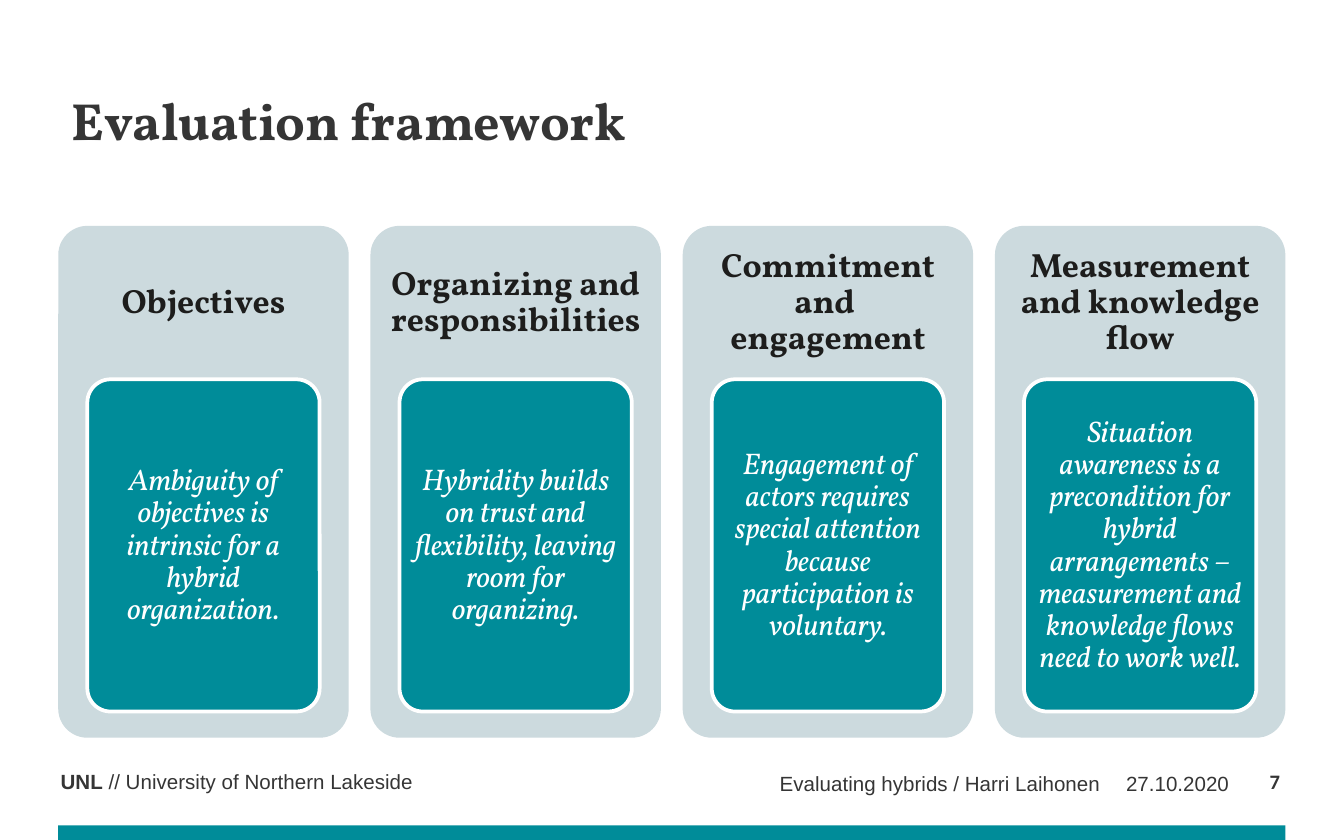
from pptx import Presentation
from pptx.dml.color import RGBColor
from pptx.enum.shapes import MSO_SHAPE as SHAPE
from pptx.enum.text import MSO_ANCHOR as ANCHOR, PP_ALIGN as ALIGN
from pptx.util import Pt

TEAL = RGBColor(0x00, 0x8C, 0x99)
MIST = RGBColor(0xCC, 0xDA, 0xDE)
WHITE = RGBColor(0xFF, 0xFF, 0xFF)
GREY = RGBColor(0x35, 0x35, 0x35)
INK = RGBColor(0x1D, 0x1D, 0x1C)

LEFT, WIDTH = 31.2, 657.4
CARD_TOP, CARD_W, CARD_H = 121, 155.6, 274.2
HEAD_H = 82.2
PANEL_TOP, PANEL_H = 203.2, 178

CARDS = [
    ("Objectives",
     "Ambiguity of objectives is intrinsic for a hybrid organization."),
    ("Organizing and responsibilities",
     "Hybridity builds on trust and flexibility, leaving room for organizing."),
    ("Commitment and \vengagement",
     "Engagement of actors requires special attention because participation "
     "is voluntary."),
    ("Measurement and knowledge flow",
     "Situation awareness is a precondition for hybrid arrangements – "
     "measurement and knowledge flows need to work well."),
]


def write(sp, text, size, color, font="Arial", bold=False, italic=False,
          align=ALIGN.LEFT, anchor=ANCHOR.TOP, inset=(7.2, 3.6), spacing=None):
    tf = sp.text_frame
    tf.word_wrap = True
    tf.vertical_anchor = anchor
    tf.margin_left = tf.margin_right = Pt(inset[0])
    tf.margin_top = tf.margin_bottom = Pt(inset[1])
    tf.text = text
    p = tf.paragraphs[0]
    p.alignment = align
    p.line_spacing = spacing
    for r in p.runs:
        style_run(r, size, color, font, bold, italic)
    return p


def style_run(r, size, color, font, bold=False, italic=False):
    r.font.size = Pt(size)
    r.font.name = font
    r.font.bold = bold
    r.font.italic = italic
    r.font.color.rgb = color


def add_text(slide, x, y, w, h, text, size, color, **style):
    sp = slide.shapes.add_textbox(Pt(x), Pt(y), Pt(w), Pt(h))
    return write(sp, text, size, color, **style)


def add_block(slide, kind, x, y, w, h, fill, line=None):
    sp = slide.shapes.add_shape(kind, Pt(x), Pt(y), Pt(w), Pt(h))
    sp.shadow.inherit = False
    sp.fill.solid()
    sp.fill.fore_color.rgb = fill
    if line is None:
        sp.line.fill.background()
    else:
        sp.line.color.rgb = line
        sp.line.width = Pt(2)
    if kind == SHAPE.ROUNDED_RECTANGLE:
        sp.adjustments[0] = 0.1
    return sp


def add_card(slide, x, heading, body):
    centred = dict(font="Vollkorn", align=ALIGN.CENTER, anchor=ANCHOR.MIDDLE,
                   spacing=0.9)
    add_block(slide, SHAPE.ROUNDED_RECTANGLE, x, CARD_TOP, CARD_W, CARD_H, MIST)
    add_text(slide, x, CARD_TOP, CARD_W, HEAD_H, heading, 18, INK,
             bold=True, inset=(5, 5), **centred)
    panel = add_block(slide, SHAPE.ROUNDED_RECTANGLE, x + CARD_W * 0.1,
                      PANEL_TOP, CARD_W * 0.8, PANEL_H, TEAL, WHITE)
    write(panel, body, 16, WHITE, italic=True, inset=(3.2, 2.5), **centred)


def add_footer(slide):
    p = add_text(slide, 25.4, 408.2, 278, 20.6, "UNL", 11, GREY, bold=True)
    r = p.add_run()
    r.text = " // University of Northern Lakeside"
    style_run(r, 11, GREY, "Arial")
    right = dict(align=ALIGN.RIGHT, inset=(0, 0))
    add_text(slide, 589.5, 411.5, 69, 16.6, "27.10.2020", 11, GREY,
             anchor=ANCHOR.MIDDLE, **right)
    add_text(slide, 240.3, 411.5, 349.2, 16.6,
             "Evaluating hybrids / Harri Laihonen", 11, GREY,
             anchor=ANCHOR.MIDDLE, **right)
    add_text(slide, 657.5, 412, 28.3, 16.6, "7", 11, GREY, font="Calibri",
             bold=True, **right)


def main():
    prs = Presentation()
    prs.slide_width, prs.slide_height = Pt(720), Pt(450)
    slide = prs.slides.add_slide(prs.slide_layouts[6])

    add_block(slide, SHAPE.RECTANGLE, LEFT, 442.2, WIDTH, 9.2, TEAL)
    add_text(slide, LEFT, 43.2, WIDTH, 66.2, "Evaluation framework", 28, GREY,
             font="Vollkorn", bold=True, spacing=Pt(34))
    pitch = (WIDTH - CARD_W) / (len(CARDS) - 1)
    for i, (heading, body) in enumerate(CARDS):
        add_card(slide, LEFT + i * pitch, heading, body)
    add_footer(slide)

    prs.save("out.pptx")


if __name__ == "__main__":
    main()
